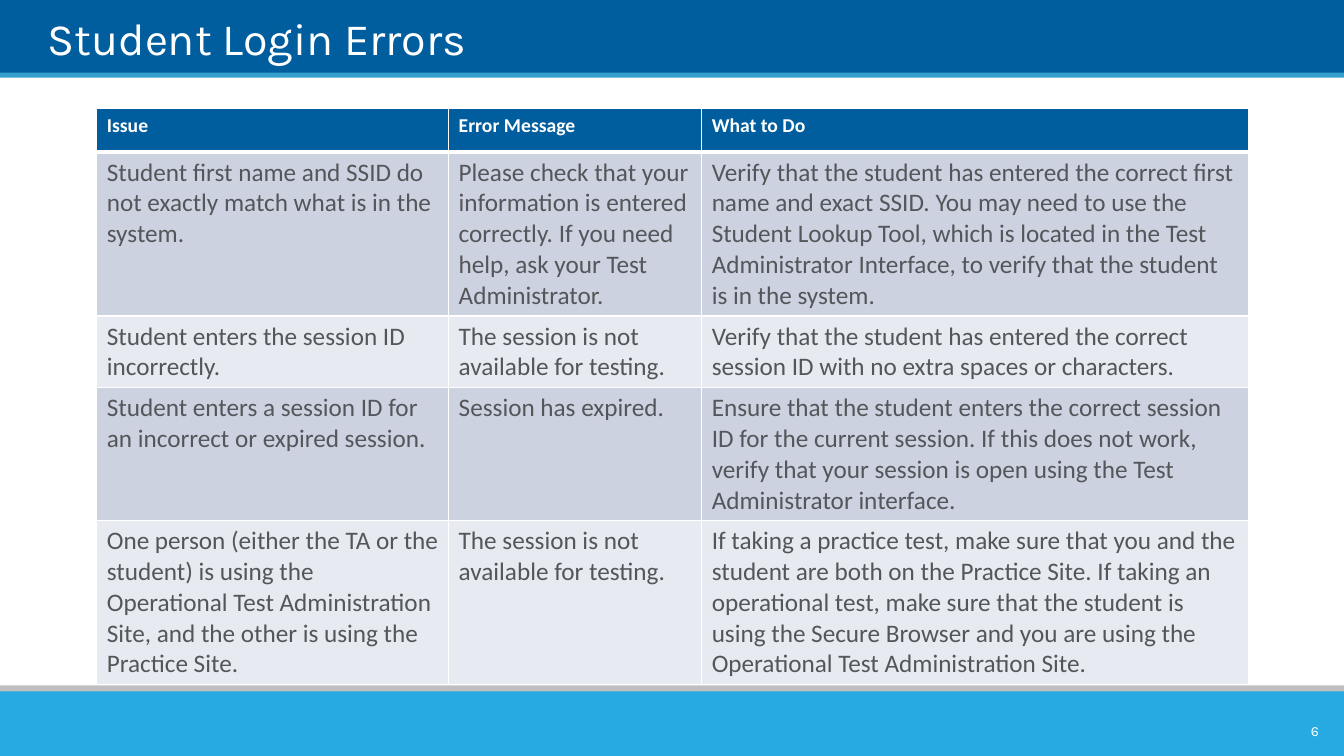
from lxml.etree import SubElement
from pptx import Presentation
from pptx.dml.color import RGBColor
from pptx.enum.shapes import MSO_SHAPE
from pptx.enum.text import MSO_ANCHOR, MSO_AUTO_SIZE, PP_ALIGN
from pptx.oxml.ns import qn
from pptx.util import Inches, Pt

NAVY = RGBColor(0x00, 0x5E, 0x9E)
SKY = RGBColor(0x35, 0xA0, 0xCE)
CYAN = RGBColor(0x27, 0xAA, 0xE1)
SILVER = RGBColor(0xBF, 0xBF, 0xBF)
WHITE = RGBColor(0xFF, 0xFF, 0xFF)
SLATE = RGBColor(0x53, 0x56, 0x5A)
BAND_DARK = RGBColor(0xCC, 0xD2, 0xDF)
BAND_LIGHT = RGBColor(0xE7, 0xEA, 0xF0)

SLIDE_WIDTH = 13.33
HEADING_FONT = "Karla"
TABLE_FONT = "Calibri"

BARS = [(-0.01, 0.75, NAVY), (0.72, 0.05, SKY), (6.8, 0.14, SILVER), (6.86, 0.64, CYAN)]
COLUMN_WIDTHS = [3.49, 2.51, 5.42]
ROW_HEIGHTS = [0.43, 1.62, 0.71, 1.32, 1.62]
LOGIN_ERRORS = [
    ("Issue", "Error Message", "What to Do"),
    ("Student first name and SSID do not exactly match what is in the system.",
     "Please check that your information is entered correctly. If you need help, "
     "ask your Test Administrator.",
     "Verify that the student has entered the correct first name and exact SSID. "
     "You may need to use the Student Lookup Tool, which is located in the Test "
     "Administrator Interface, to verify that the student is in the system."),
    ("Student enters the session ID incorrectly.",
     "The session is not available for testing.",
     "Verify that the student has entered the correct session ID with no extra "
     "spaces or characters."),
    ("Student enters a session ID for an incorrect or expired session.",
     "Session has expired.",
     "Ensure that the student enters the correct session ID for the current session. "
     "If this does not work, verify that your session is open using the Test "
     "Administrator interface."),
    ("One person (either the TA or the student) is using the Operational Test "
     "Administration Site, and the other is using the Practice Site.",
     "The session is not available for testing.",
     "If taking a practice test, make sure that you and the student are both on the "
     "Practice Site. If taking an operational test, make sure that the student is "
     "using the Secure Browser and you are using the Operational Test "
     "Administration Site."),
]


class SlideBuilder:
    def __init__(self, slide):
        self.slide = slide

    def style(self, paragraph, font_name, size, color, bold=False):
        font = paragraph.font
        font.name, font.size, font.bold = font_name, Pt(size), bold
        font.color.rgb = color

    def bar(self, top, height, color):
        shape = self.slide.shapes.add_shape(
            MSO_SHAPE.RECTANGLE, 0, Inches(top), Inches(SLIDE_WIDTH), Inches(height))
        shape.shadow.inherit = False
        shape.fill.solid()
        shape.fill.fore_color.rgb = color
        shape.line.fill.background()

    def title(self, text):
        title = self.slide.shapes.title
        title.left, title.top = Inches(0.47), Inches(0.07)
        title.width, title.height = Inches(12.05), Inches(0.57)
        frame = title.text_frame
        frame.text = text
        frame.auto_size = MSO_AUTO_SIZE.NONE
        frame.vertical_anchor = MSO_ANCHOR.BOTTOM
        frame.margin_left = frame.margin_right = frame.margin_top = frame.margin_bottom = 0
        paragraph = frame.paragraphs[0]
        paragraph.alignment = PP_ALIGN.LEFT
        self.style(paragraph, HEADING_FONT, 32, WHITE)
        # Bring the title in front of the bars
        self.slide.shapes._spTree.append(title._element)

    def table(self, left, top, rows):
        table = self.slide.shapes.add_table(
            len(rows), len(COLUMN_WIDTHS), Inches(left), Inches(top),
            Inches(sum(COLUMN_WIDTHS)), Inches(sum(ROW_HEIGHTS))).table
        for column, width in zip(table.columns, COLUMN_WIDTHS):
            column.width = Inches(width)
        for row, height in zip(table.rows, ROW_HEIGHTS):
            row.height = Inches(height)
        for row_index, texts in enumerate(rows):
            for column_index, text in enumerate(texts):
                self.cell(table.cell(row_index, column_index), text, row_index)

    def cell(self, cell, text, row_index):
        is_header = row_index == 0
        cell.text = text
        self.style(cell.text_frame.paragraphs[0], TABLE_FONT, 14 if is_header else 18,
                   WHITE if is_header else SLATE, is_header)
        self.border(cell, "a:lnL", 1)
        self.border(cell, "a:lnR", 1)
        self.border(cell, "a:lnT", 3 if row_index == 1 else 1)
        self.border(cell, "a:lnB", 3 if is_header else 1)
        cell.fill.solid()
        band = BAND_DARK if row_index % 2 else BAND_LIGHT
        cell.fill.fore_color.rgb = NAVY if is_header else band

    def border(self, cell, side, width):
        line = SubElement(cell._tc.get_or_add_tcPr(), qn(side), w=str(Pt(width)))
        fill = SubElement(line, qn("a:solidFill"))
        SubElement(fill, qn("a:srgbClr"), val=str(WHITE))

    def page_number(self, number):
        box = self.slide.shapes.add_textbox(
            Inches(12.78), Inches(7.11), Inches(0.4), Inches(0.29))
        frame = box.text_frame
        frame.word_wrap = True
        frame.vertical_anchor = MSO_ANCHOR.MIDDLE
        frame.text = str(number)
        paragraph = frame.paragraphs[0]
        paragraph.alignment = PP_ALIGN.RIGHT
        self.style(paragraph, HEADING_FONT, 10, WHITE)


def main():
    presentation = Presentation()
    presentation.slide_width = Inches(SLIDE_WIDTH)
    presentation.slide_height = Inches(7.5)
    title_only = presentation.slide_layouts[5]
    builder = SlideBuilder(presentation.slides.add_slide(title_only))
    for top, height, color in BARS:
        builder.bar(top, height, color)
    builder.title("Student Login Errors")
    builder.table(0.96, 1.08, LOGIN_ERRORS)
    builder.page_number(6)
    presentation.save("out.pptx")


if __name__ == "__main__":
    main()
